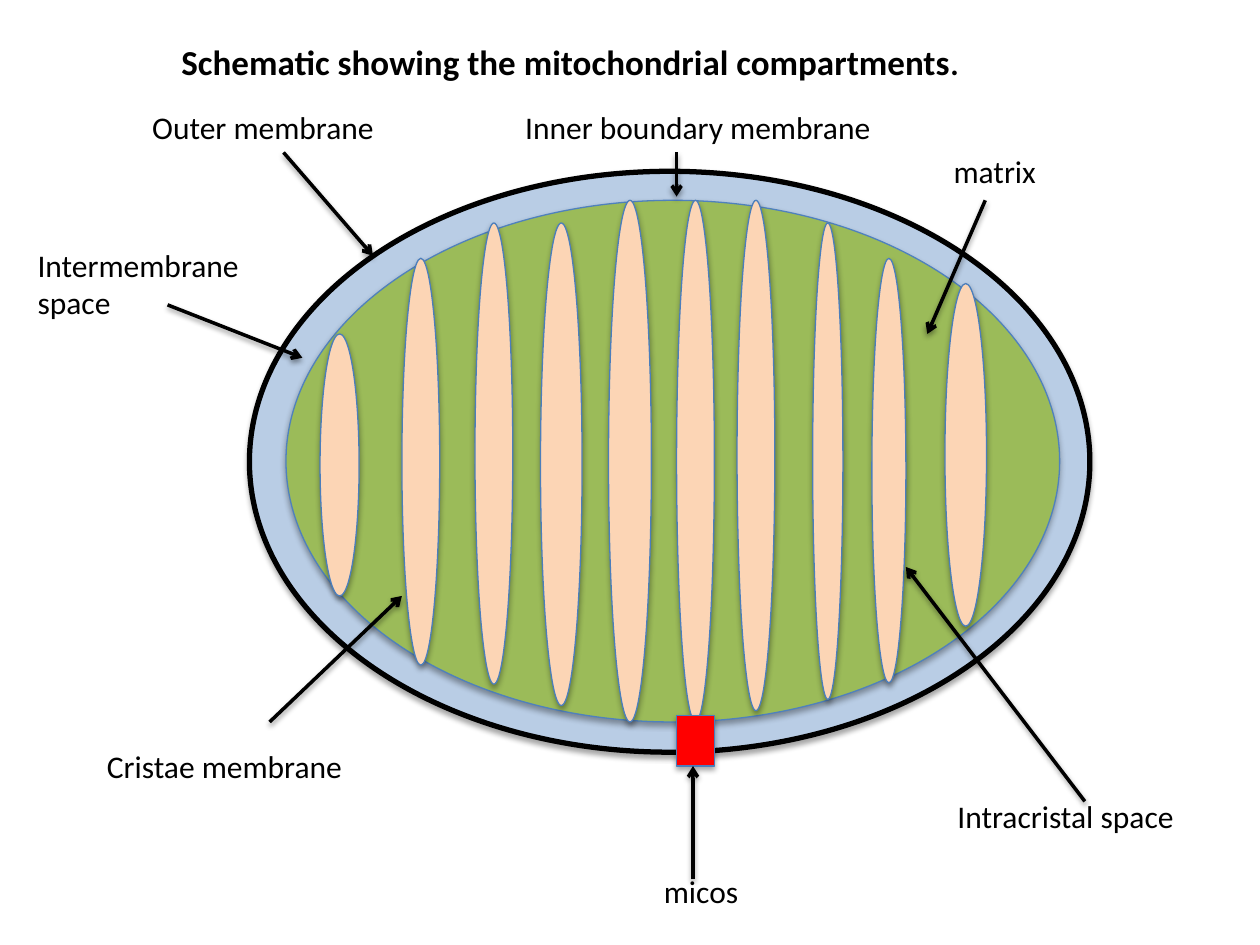
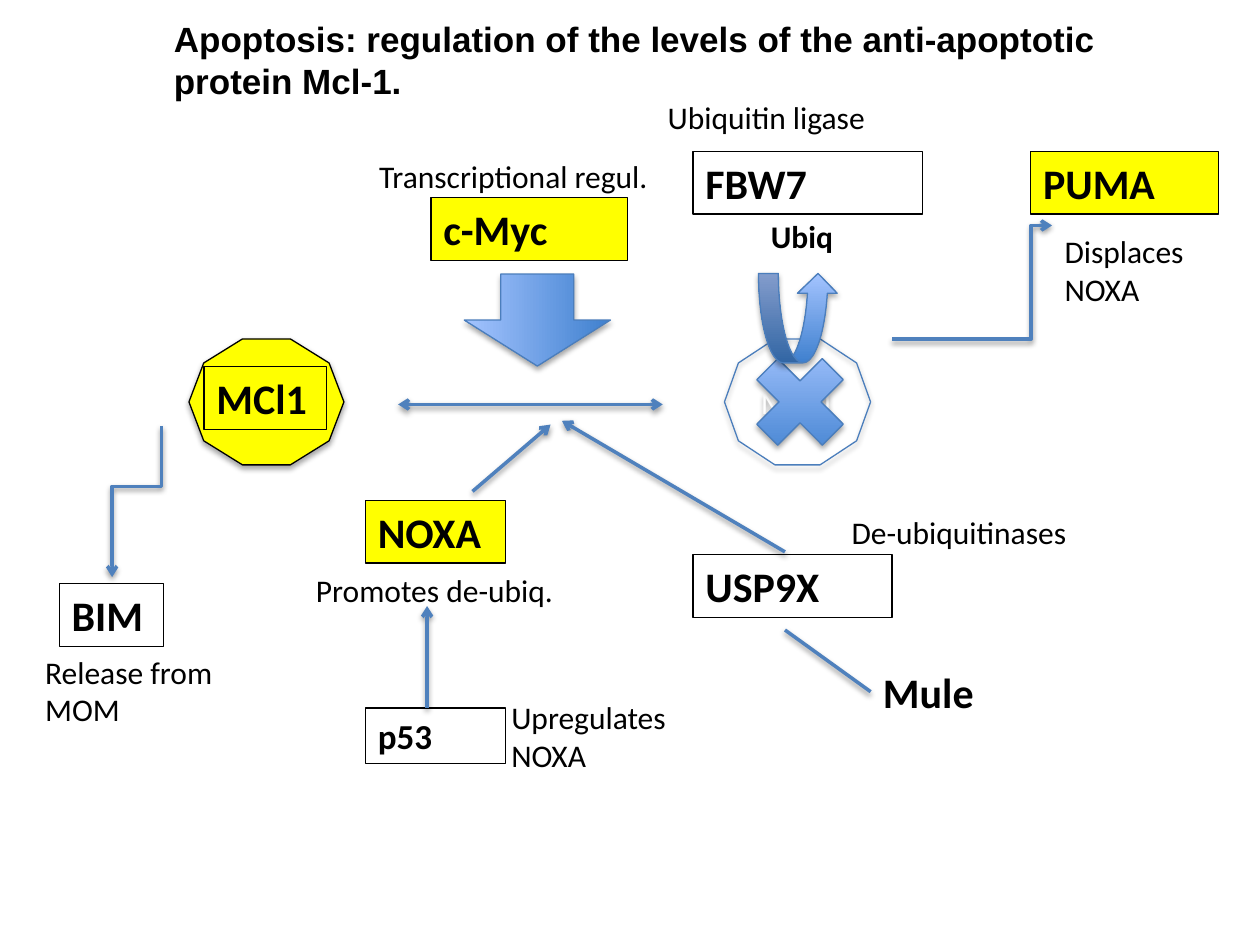
from lxml import etree
from pptx import Presentation
from pptx import util as u
from pptx.dml.color import RGBColor
from pptx.enum import shapes, text
from pptx.oxml import ns

COLORS = {
    "ink": "000000", "white": "FFFFFF", "edge": "4B7EBC", "link": "4F81BD",
    "intermembrane": "B9CDE5", "matrix": "9BBB59", "crista": "FCD5B5",
    "micos": "FF0000", "highlight": "FFFF00",
    "gradient dark": "3F80CE", "gradient light": "A4C4FF",
}
FONT = "Calibri"
SHAPE = shapes.MSO_SHAPE

# Slide 1: the mitochondrion
COMPARTMENTS_TITLE = ["Schematic showing the mitochondrial compartments", "."]
COMPARTMENTS_TITLE_AT = (1.34, 0.27, 7.64, 0.44)
MEMBRANES = [  # box, fill, line colour, line width
    ((1.98, 1.36, 6.67, 4.61), "intermembrane", "ink", 3),
    ((2.27, 1.59, 6.14, 4.14), "matrix", "link", 0.75),
]
CRISTAE = [  # left, top, width, height
    (2.54, 2.65, 0.31, 2.08), (3.19, 2.05, 0.3, 3.23), (3.77, 1.77, 0.3, 3.66),
    (4.29, 1.77, 0.33, 3.83), (4.83, 1.59, 0.34, 4.14), (5.37, 1.59, 0.3, 4.14),
    (5.85, 1.59, 0.3, 4.05), (6.45, 1.77, 0.24, 3.78), (6.92, 2.05, 0.27, 3.37),
    (7.5, 2.25, 0.33, 2.72),
]
MICOS_AT = (5.37, 5.68, 0.3, 0.4)
COMPARTMENTS = [  # label, box, wraps, pointer start, pointer end
    ("matrix", (7.47, 1.16, 0.86, 0.4), False, (7.82, 1.59), (7.36, 2.65)),
    ("Outer membrane", (1.11, 0.81, 2.28, 0.4), True, (2.25, 1.21), (2.96, 2.03)),
    ("Inner boundary membrane", (4.07, 0.81, 2.97, 0.4), False, (5.37, 1.21), (5.37, 1.56)),
    ("Intermembrane\nspace", (0.2, 1.9, 1.83, 0.71), False, (1.33, 2.42), (2.4, 2.84)),
    ("Cristae membrane", (0.75, 5.88, 2.1, 0.4), False, (2.14, 5.73), (3.19, 4.73)),
    ("micos", (5.17, 6.87, 0.81, 0.4), True, (5.5, 6.98), (5.5, 6.08)),
    ("Intracristal space", (7.5, 6.28, 1.95, 0.4), False, (8.61, 6.36), (7.19, 4.5)),
]

# Slide 2: regulation of Mcl-1
REGULATION_TITLE = ["Apoptosis: regulation of the levels of the anti-apoptotic protein Mcl-1."]
REGULATION_TITLE_AT = (1.28, 0.09, 7.65, 0.77)
MCL1_AT = (1.5, 2.69, 1.23, 1)
DEGRADED_MCL1_AT = (5.75, 2.69, 1.16, 1)
GRADIENT_MARKS = [  # preset, box, rotation
    (SHAPE.LEFT_ARROW, (3.9, 1.96, 0.73, 1.16), 270),
    (SHAPE.MATH_MULTIPLY, (5.85, 2.69, 1, 1), 0),
    (SHAPE.CURVED_UP_ARROW, (6.02, 2.17, 0.63, 0.71), 0),
]
PROTEINS = [  # name, box, fill, size
    ("MCl1", (1.62, 2.91, 0.97, 0.5), None, 24),
    ("USP9X", (5.5, 4.4, 1.58, 0.5), "white", 24),
    ("NOXA", (2.9, 3.97, 1.11, 0.5), "highlight", 24),
    ("p53", (2.9, 5.62, 1.11, 0.44), None, 20),
    ("FBW7", (5.5, 1.2, 1.82, 0.5), "white", 24),
    ("BIM", (0.47, 4.63, 0.83, 0.5), "white", 24),
    ("PUMA", (8.18, 1.2, 1.49, 0.5), "highlight", 24),
    ("c-Myc", (3.42, 1.57, 1.56, 0.5), "highlight", 24),
]
ROLES = [  # text, box, size, bold
    ("Ubiq", (6.02, 1.67, 0.89, 0.4), 18, True),
    ("Mule", (6.91, 5.24, 1.27, 0.5), 24, True),
    ("Release from MOM", (0.26, 5.13, 1.68, 0.71), 18, False),
    ("Displaces NOXA", (8.35, 1.79, 1.35, 0.71), 18, False),
    ("Transcriptional regul.", (2.91, 1.2, 2.41, 0.4), 18, False),
    ("Upregulates NOXA", (3.96, 5.49, 2.07, 0.71), 18, False),
    ("Promotes de-ubiq.", (2.41, 4.48, 2.36, 0.4), 18, False),
    ("De-ubiquitinases", (6.66, 4.02, 2.38, 0.4), 18, False),
    ("Ubiquitin ligase", (5.2, 0.73, 2.41, 0.4), 18, False),
]
INTERACTIONS = [  # start, end, ends with arrowheads
    ((3.16, 3.21), (5.26, 3.21), ("headEnd", "tailEnd")),
    ((6.23, 5), (6.91, 5.49), ()),
    ((3.39, 5.62), (3.39, 4.81), ("tailEnd",)),
    ((3.75, 3.9), (4.37, 3.37), ("tailEnd",)),
    ((6.23, 4.38), (4.46, 3.34), ("tailEnd",)),
]
BENT_INTERACTIONS = [  # start, end, position of the bend, leaves vertically
    ((1.28, 3.38), (0.89, 4.58), 0.4, True),
    ((7.08, 2.69), (8.35, 1.79), 0.87, False),
]


def rgb(name):
    return RGBColor.from_string(COLORS[name])


def inches(values):
    return [u.Inches(value) for value in values]


def add_xml(parent, tag, **attributes):
    return etree.SubElement(parent, ns.qn(tag), attributes)


def add_shadow(item, opacity):
    effects = add_xml(item.element.spPr, "a:effectLst")
    shadow = add_xml(effects, "a:outerShdw", blurRad="40000", dist="23000",
                     dir="5400000", rotWithShape="0")
    black = add_xml(shadow, "a:srgbClr", val=COLORS["ink"])
    add_xml(black, "a:alpha", val=str(opacity * 1000))


def paint(item, fill, line=None, width=0.75):
    if fill:
        item.fill.solid()
        item.fill.fore_color.rgb = rgb(fill)
    else:
        item.fill.background()
    if line:
        item.line.color.rgb = rgb(line)
        item.line.width = u.Pt(width)


def format_runs(frame, size, bold=False, color="ink", font=FONT):
    for paragraph in frame.paragraphs:
        for run in paragraph.runs:
            run.font.size = u.Pt(size)
            run.font.bold = bold
            run.font.name = font
            run.font.color.rgb = rgb(color)


def add_part(slide, preset, box, fill, line="edge", width=0.75):
    part = slide.shapes.add_shape(preset, *inches(box))
    paint(part, fill, line, width)
    add_shadow(part, 35)
    return part


def add_gradient_mark(slide, preset, box, rotation):
    mark = add_part(slide, preset, box, "link")
    mark.rotation = rotation
    mark.fill.gradient()
    mark.fill.gradient_angle = 90
    for stop, shade in zip(mark.fill.gradient_stops, ("gradient dark", "gradient light")):
        stop.color.rgb = rgb(shade)


def add_label(slide, words, box, size=18, bold=False, wraps=True):
    label = slide.shapes.add_textbox(*inches(box))
    frame = label.text_frame
    frame.text = words
    frame.word_wrap = wraps
    frame.auto_size = text.MSO_AUTO_SIZE.SHAPE_TO_FIT_TEXT
    format_runs(frame, size, bold)
    return label


def add_link(slide, start, end, color, heads=("tailEnd",), kind=shapes.MSO_CONNECTOR.STRAIGHT):
    link = slide.shapes.add_connector(kind, *inches(start + end))
    link.line.color.rgb = rgb(color)
    link.line.width = u.Pt(2)
    for head in heads:
        add_xml(link.line._get_or_add_ln(), "a:" + head, type="arrow")
    add_shadow(link, 38)
    return link


def add_bent_link(slide, start, end, bend, vertical):
    """A vertical start is a horizontal elbow turned by 90 degrees about its centre."""
    if vertical:
        x, y = ((a + b) / 2 for a, b in zip(start, end))
        start, end = ((x + py - y, y - px + x) for px, py in (start, end))
    link = add_link(slide, start, end, "link", kind=shapes.MSO_CONNECTOR.ELBOW)
    properties = link.element.spPr
    if vertical:
        properties.find(ns.qn("a:xfrm")).set("rot", "5400000")
    guides = properties.find(ns.qn("a:prstGeom")).find(ns.qn("a:avLst"))
    add_xml(guides, "a:gd", name="adj1", fmla=f"val {round(bend * 100000)}")


def add_titled_slide(deck, pieces, box, font):
    slide = deck.slides.add_slide(deck.slide_layouts[5])
    title = slide.shapes.title
    title.left, title.top, title.width, title.height = inches(box)
    frame = title.text_frame
    frame.word_wrap = True
    frame.auto_size = text.MSO_AUTO_SIZE.NONE
    frame.vertical_anchor = text.MSO_ANCHOR.TOP
    paragraph = frame.paragraphs[0]
    paragraph.alignment = text.PP_ALIGN.LEFT
    for piece in pieces:
        paragraph.add_run().text = piece
    format_runs(frame, 20, True, font=font)
    return slide


def build_compartments(deck):
    slide = add_titled_slide(deck, COMPARTMENTS_TITLE, COMPARTMENTS_TITLE_AT, FONT)
    slide.shapes.title.text_frame.paragraphs[0].runs[-1].font.size = u.Pt(18)
    for box, fill, line, width in MEMBRANES:
        add_part(slide, SHAPE.OVAL, box, fill, line, width)
    for box in CRISTAE:
        add_part(slide, SHAPE.OVAL, box, "crista")
    add_part(slide, SHAPE.RECTANGLE, MICOS_AT, "micos")
    for words, box, wraps, start, end in COMPARTMENTS:
        add_label(slide, words, box, wraps=wraps)
        add_link(slide, start, end, "ink")


def build_regulation(deck):
    slide = add_titled_slide(deck, REGULATION_TITLE, REGULATION_TITLE_AT, "Arial")
    add_part(slide, SHAPE.DECAGON, MCL1_AT, "highlight", "ink")
    degraded = add_part(slide, SHAPE.DECAGON, DEGRADED_MCL1_AT, None)
    degraded.text_frame.text = "Mcl-1"
    degraded.text_frame.paragraphs[0].alignment = text.PP_ALIGN.CENTER
    format_runs(degraded.text_frame, 18, color="white")
    for mark in GRADIENT_MARKS:
        add_gradient_mark(slide, *mark)
    for name, box, fill, size in PROTEINS:
        paint(add_label(slide, name, box, size, True), fill, "ink")
    for role in ROLES:
        add_label(slide, *role)
    for start, end, heads in INTERACTIONS:
        add_link(slide, start, end, "link", heads)
    for bent in BENT_INTERACTIONS:
        add_bent_link(slide, *bent)


def main():
    deck = Presentation()
    deck.slide_width, deck.slide_height = inches((10, 7.5))
    build_compartments(deck)
    build_regulation(deck)
    deck.save("out.pptx")


if __name__ == "__main__":
    main()
